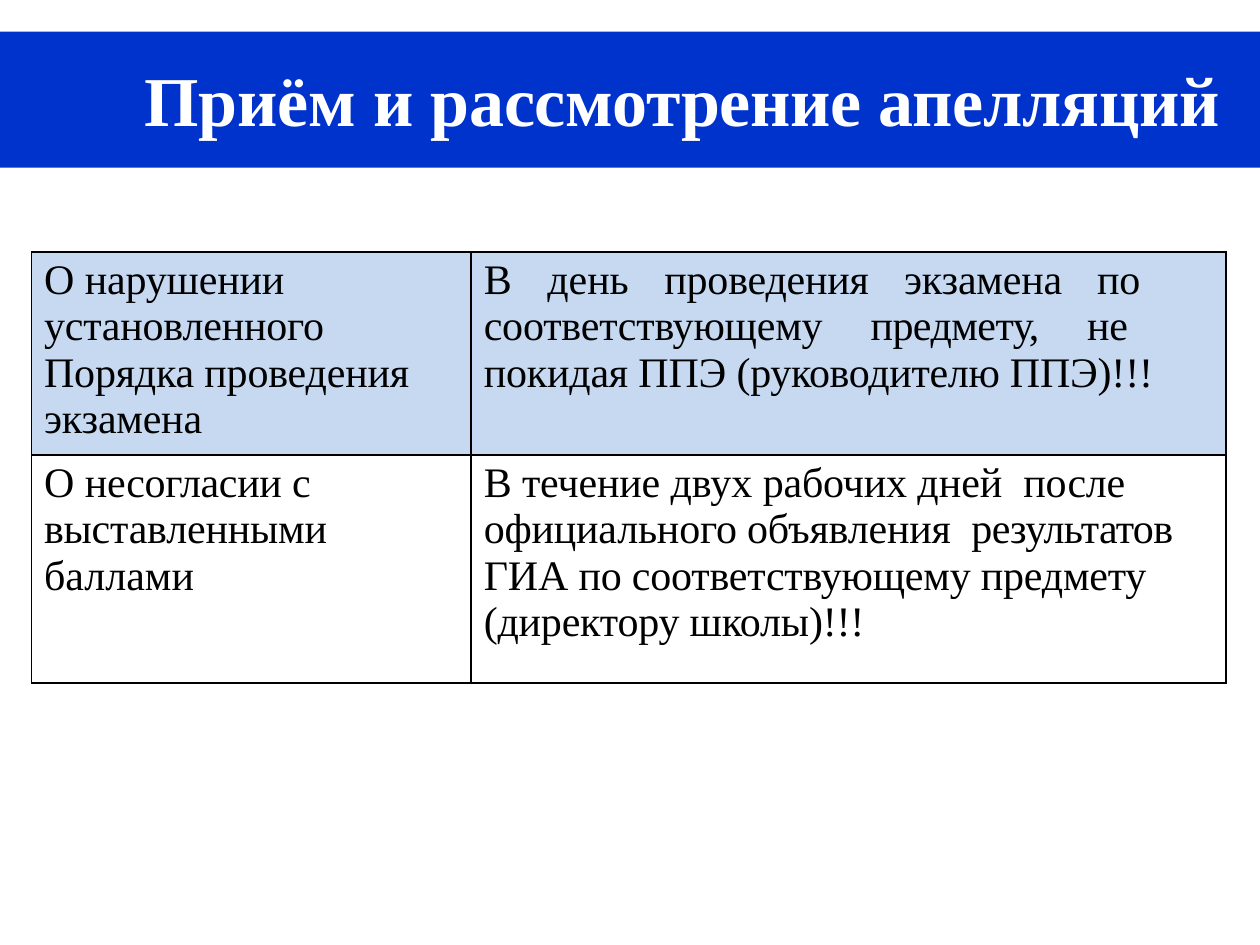
"""Build a slide on exam appeals: a title band above a two-by-two table."""
from lxml import etree
from pptx import Presentation
from pptx.dml.color import RGBColor
from pptx.enum.shapes import MSO_SHAPE
from pptx.enum.text import MSO_ANCHOR, PP_ALIGN
from pptx.oxml.ns import qn
from pptx.util import Inches, Pt

RECT = MSO_SHAPE.RECTANGLE
MIDDLE, TOP = MSO_ANCHOR.MIDDLE, MSO_ANCHOR.TOP
LEFT, CENTER, JUSTIFY = PP_ALIGN.LEFT, PP_ALIGN.CENTER, PP_ALIGN.JUSTIFY
COLS, ROWS = [3.49, 5.99], [1.61, 1.81]
FILLS = ["C6D9F1", "FFFFFF"]
RIGHT_MARGINS = {LEFT: 0, JUSTIFY: 0.4}
CELLS = [
    [
        (LEFT, [[("О ", 0), ("нарушении", -0.1)],
                [("установленного  Порядка проведения  экзамена", -0.1)]]),
        (JUSTIFY, [[("В день ", 0), ("проведения экзамена по  соответствующему ", -0.1),
                    ("предмету, ", -0.3), ("не  покидая ППЭ ", -0.1),
                    ("(руководителю ", -0.2), ("ППЭ)!!!", -0.1)]]),
    ],
    [
        (LEFT, [[("О ", 0), ("несогласии ", -0.2), ("с", 0)],
                [("выставленными", -0.1)],
                [("баллами", 0)]]),
        (LEFT, [[("В", 0), (" течение ", -0.1), ("двух ", 0), ("рабочих ", -0.1),
                 ("дней  ", 0), ("после официального объявления  ", -0.1),
                 ("результатов ", -0.4),
                 ("ГИА по соответствующему предмету  (директору школы)!!!", -0.1)]]),
    ],
]


def rgb(value):
    return RGBColor.from_string(value)


def add_run(p, text, size, color, spacing, bold=False):
    r = p.add_run()
    r.text = text
    r.font.name = "Times New Roman"
    r.font.size = Pt(size)
    r.font.bold = bold
    r.font.color.rgb = rgb(color)
    r.font._element.set("spc", str(round(spacing * 100)))


prs = Presentation()
prs.slide_width, prs.slide_height = Inches(10), Inches(7.5)
s = prs.slides.add_slide(prs.slide_layouts[5])

band = s.shapes.add_shape(RECT, 0, Inches(0.25), prs.slide_width, Inches(1.08))
band.shadow.inherit = False
band.fill.solid()
band.fill.fore_color.rgb = rgb("0033CC")
band.line.fill.background()
title = s.shapes.title
title._element.addprevious(band._element)

title.left, title.top = Inches(0.83), Inches(0.4)
title.width, title.height = Inches(9.17), Inches(0.77)
tf = title.text_frame
tf.word_wrap = True
tf.vertical_anchor = MIDDLE
p = tf.paragraphs[0]
p.alignment = CENTER
add_run(p, "Приём и рассмотрение апелляций", 40, "FFFFFF", -0.1, True)

table = s.shapes.add_table(len(ROWS), len(COLS), Inches(0.25), Inches(2),
                           Inches(sum(COLS)), Inches(sum(ROWS))).table
table.first_row = table.horz_banding = False
for column, width in zip(table.columns, COLS):
    column.width = Inches(width)
for row, height, fill, contents in zip(table.rows, ROWS, FILLS, CELLS):
    row.height = Inches(height)
    for cell, (align, paragraphs) in zip(row.cells, contents):
        cell.margin_left = cell.margin_bottom = 0
        cell.margin_right = Inches(RIGHT_MARGINS[align])
        cell.margin_top = Inches(0.04)
        cell.vertical_anchor = TOP
        for side in ("a:lnL", "a:lnR", "a:lnT", "a:lnB"):
            ln = etree.SubElement(cell._tc.get_or_add_tcPr(), qn(side), w=str(Pt(1)))
            solid = etree.SubElement(ln, qn("a:solidFill"))
            etree.SubElement(solid, qn("a:srgbClr"), val="000000")
        cell.fill.solid()
        cell.fill.fore_color.rgb = rgb(fill)
        tf = cell.text_frame
        for i, runs in enumerate(paragraphs):
            p = tf.add_paragraph() if i else tf.paragraphs[0]
            p.alignment = align
            p.space_before = Pt(0 if i else 3)
            p._p.get_or_add_pPr().set("marL", str(Inches(0.1)))
            for text, spacing in runs:
                add_run(p, text, 24, "000000", spacing)

prs.save("out.pptx")
